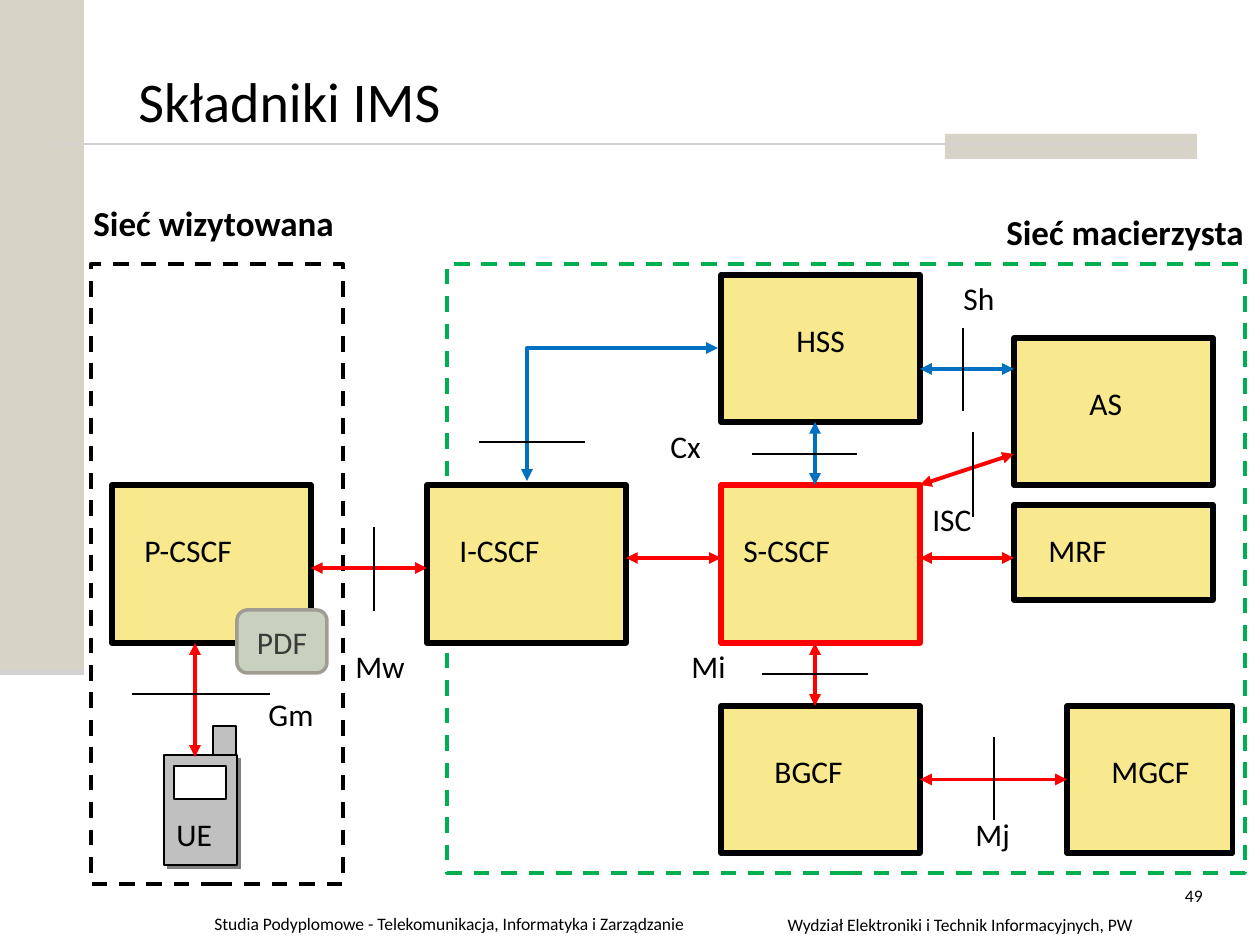
from lxml import etree
from pptx import Presentation
from pptx.dml.color import RGBColor
from pptx.enum.dml import MSO_LINE
from pptx.enum.shapes import MSO_CONNECTOR, MSO_SHAPE
from pptx.enum.text import MSO_ANCHOR, PP_ALIGN
from pptx.oxml.ns import qn
from pptx.util import Pt

RECT, ROUNDED = MSO_SHAPE.RECTANGLE, MSO_SHAPE.ROUNDED_RECTANGLE
STRAIGHT, ELBOW = MSO_CONNECTOR.STRAIGHT, MSO_CONNECTOR.ELBOW
DASH = MSO_LINE.DASH
MIDDLE = MSO_ANCHOR.MIDDLE
LEFT, CENTER, RIGHT = PP_ALIGN.LEFT, PP_ALIGN.CENTER, PP_ALIGN.RIGHT

FONT = "Calibri"
BLACK, WHITE, RED, BLUE, GREEN = "000000", "FFFFFF", "FF0000", "0070C0", "00B050"
SAND, RULE, NODE, PHONE, PHONE_SHADOW = "D8D3C7", "D4D2D0", "F9E98E", "C0C0C0", "808080"
PDF_FILL, PDF_LINE, PDF_TEXT = "C8D0BE", "A09C93", "3B3B3B"

TITLE = ("Składniki IMS", (126, 35, 1071, 130))
FOOTERS = [  # text, place, alignment
    ("Wydział Elektroniki i Technik Informacyjnych, PW", (755, 908, 410, 34), CENTER),
    ("49", (1154, 879, 61, 63), RIGHT),
    ("Studia Podyplomowe - Telekomunikacja, Informatyka i Zarządzanie", (202, 907, 562, 35), LEFT),
]
NETWORKS = [  # name, name place, frame, frame colour
    ("Sieć wizytowana", (81, 195, 268, 55), (91, 264, 252, 620), BLACK),
    ("Sieć macierzysta", (994, 204, 265, 55), (447, 264, 798, 609), GREEN),
]

LABEL_H = 50
NODE_W, NODE_H, CSCF_H, MRF_H, MGCF_W = 199, 147, 158, 95, 166
P_X, I_X, S_X, AS_X, MGCF_X = 112, 427, 721, 1014, 1067
HSS_Y, AS_Y, CSCF_Y, MRF_Y, BGCF_Y = 275, 338, 485, 505, 706
NODES = {  # name: (frame, line colour, label left, label width)
    "P-CSCF": ((P_X, CSCF_Y, NODE_W, CSCF_H), BLACK, 132, 115),
    "I-CSCF": ((I_X, CSCF_Y, NODE_W, CSCF_H), BLACK, 447, 106),
    "S-CSCF": ((S_X, CSCF_Y, NODE_W, CSCF_H), RED, 731, 113),
    "HSS": ((S_X, HSS_Y, NODE_W, NODE_H), BLACK, 784, 74),
    "AS": ((AS_X, AS_Y, NODE_W, NODE_H), BLACK, 1077, 58),
    "MRF": ((AS_X, MRF_Y, NODE_W, MRF_H), BLACK, 1036, 84),
    "BGCF": ((S_X, BGCF_Y, NODE_W, NODE_H), BLACK, 762, 95),
    "MGCF": ((MGCF_X, BGCF_Y, MGCF_W, NODE_H), BLACK, 1099, 105),
}
LABEL_DROP = {"MRF": 20}  # from node top to label top
TALL_LABEL_DROP = 40

NODE_RIGHT = S_X + NODE_W
CSCF_BOTTOM = CSCF_Y + CSCF_H
LINKS = [
    ((195, 757), (195, CSCF_BOTTOM), RED),
    ((P_X + NODE_W, 568), (I_X, 568), RED),
    ((I_X + NODE_W, 558), (S_X, 558), RED),
    ((815, BGCF_Y), (815, CSCF_BOTTOM), RED),
    ((815, CSCF_Y), (815, HSS_Y + NODE_H), BLUE),
    ((NODE_RIGHT, 558), (AS_X, 558), RED),
    ((NODE_RIGHT, CSCF_Y), (AS_X, 454), RED),
    ((NODE_RIGHT, 369), (AS_X, 369), BLUE),
]
HSS_LINK = ((527, 481), (718, 348))

INTERFACES = [  # name, label left, top, width
    ("Gm", 256, 689, 71), ("Mw", 343, 641, 76), ("ISC", 920, 494, 66), ("Mj", 963, 809, 60),
    ("Mi", 679, 641, 60), ("Cx", 658, 421, 57), ("Sh", 951, 273, 57),
]
TICKS = [
    ((132, 694), (270, 694)), ((374, 527), (374, 611)), ((973, 432), (973, 517)),
    ((994, 737), (994, 820)), ((762, 674), (868, 674)), ((752, 454), (857, 454)),
    ((479, 442), (585, 442)), ((963, 328), (963, 411)),
]


def px(n):
    return round(n * 914400 / 126)


def color(hex_string):
    return RGBColor.from_string(hex_string)


def add_box(place, fill=None, line=None, width=0.75, kind=RECT):
    box = slide.shapes.add_shape(kind, *map(px, place))
    box.shadow.inherit = False
    if fill:
        box.fill.solid()
        box.fill.fore_color.rgb = color(fill)
    else:
        box.fill.background()
    if line:
        box.line.color.rgb = color(line)
        box.line.width = Pt(width)
    else:
        box.line.fill.background()
    return box


def write(shape, text, size=18, ink=BLACK, align=LEFT, bold=False):
    paragraph = shape.text_frame.paragraphs[0]
    paragraph.text = text
    paragraph.alignment = align
    font = paragraph.font
    font.name, font.size, font.bold = FONT, Pt(size), bold
    font.color.rgb = color(ink)


def add_text(text, place, wrap=False, **style):
    box = slide.shapes.add_textbox(*map(px, place))
    box.text_frame.word_wrap = wrap
    write(box, text, **style)
    return box


def add_line(start, end, ink, width, arrows=False, kind=STRAIGHT):
    line = slide.shapes.add_connector(kind, *map(px, start + end))
    line.line.color.rgb = color(ink)
    line.line.width = Pt(width)
    properties = line._element.spPr
    etree.SubElement(properties, qn("a:effectLst"))
    if arrows:
        for tip in ("a:headEnd", "a:tailEnd"):
            etree.SubElement(properties.find(qn("a:ln")), qn(tip), type="triangle")
    return line


def add_corner_link(start, end, ink):
    """Link that rises from start, then runs right to end: a quarter-turned elbow."""
    (x1, y1), (x2, y2) = start, end
    across, rise = x2 - x1, y1 - y2
    left, top = (x1 + x2 - rise) / 2, (y1 + y2 - across) / 2
    link = add_line((left, top), (left + rise, top + across), ink, 2.25, True, ELBOW)
    properties = link._element.spPr
    properties.find(qn("a:xfrm")).set("rot", "16200000")
    properties.find(qn("a:prstGeom")).set("prst", "bentConnector2")


def add_hard_shadow(shape):
    effects = shape._element.spPr.find(qn("a:effectLst"))
    shadow = etree.SubElement(effects, qn("a:outerShdw"), dist=str(Pt(2.8)), dir="2700000")
    etree.SubElement(shadow, qn("a:srgbClr"), val=PHONE_SHADOW)


prs = Presentation()
prs.slide_width, prs.slide_height = px(1260), px(945)
slide = prs.slides.add_slide(prs.slide_layouts[6])

# Page decoration
add_box((0, 0, 84, 672), SAND)
add_box((945, 134, 252, 25), SAND)
add_line((53, 144), (1197, 144), RULE, 1.5)
add_line((0, 672), (84, 672), RULE, 3.5)

title_text, title_place = TITLE
title = add_text(title_text, title_place, wrap=True, size=32)
title.text_frame.vertical_anchor = MIDDLE
for text, place, align in FOOTERS:
    add_text(text, place, wrap=True, size=10, align=align)

for name, name_place, frame, ink in NETWORKS:
    add_box(frame, line=ink, width=2.25).line.dash_style = DASH
    add_text(name, name_place, size=20, bold=True)

# User's phone
add_hard_shadow(add_box((164, 755, 73, 110), PHONE, BLACK))
add_box((174, 766, 52, 33), WHITE, BLACK)
add_box((213, 726, 23, 29), PHONE, BLACK)
add_text("UE", (164, 809, 62, LABEL_H))

node_boxes = {}
for name, (frame, ink, label_left, label_width) in NODES.items():
    node_boxes[name] = add_box(frame, NODE, ink, 3)
    label_top = frame[1] + LABEL_DROP.get(name, TALL_LABEL_DROP)
    add_text(name, (label_left, label_top, label_width, LABEL_H))

for start, end, ink in LINKS:
    add_line(start, end, ink, 2.25, arrows=True)
gateway_link = add_line((NODE_RIGHT, 779), (MGCF_X, 779), RED, 2.25, arrows=True)
gateway_link.begin_connect(node_boxes["BGCF"], 3)
gateway_link.end_connect(node_boxes["MGCF"], 1)
add_corner_link(*HSS_LINK, BLUE)

for start, end in TICKS:
    add_line(start, end, BLACK, 0.75)
for name, left, top, width in INTERFACES:
    add_text(name, (left, top, width, LABEL_H))

pdf = add_box((237, 610, 90, 63), PDF_FILL, PDF_LINE, 2, ROUNDED)
pdf.text_frame.vertical_anchor = MIDDLE
write(pdf, "PDF", ink=PDF_TEXT, align=CENTER)

prs.save("out.pptx")
